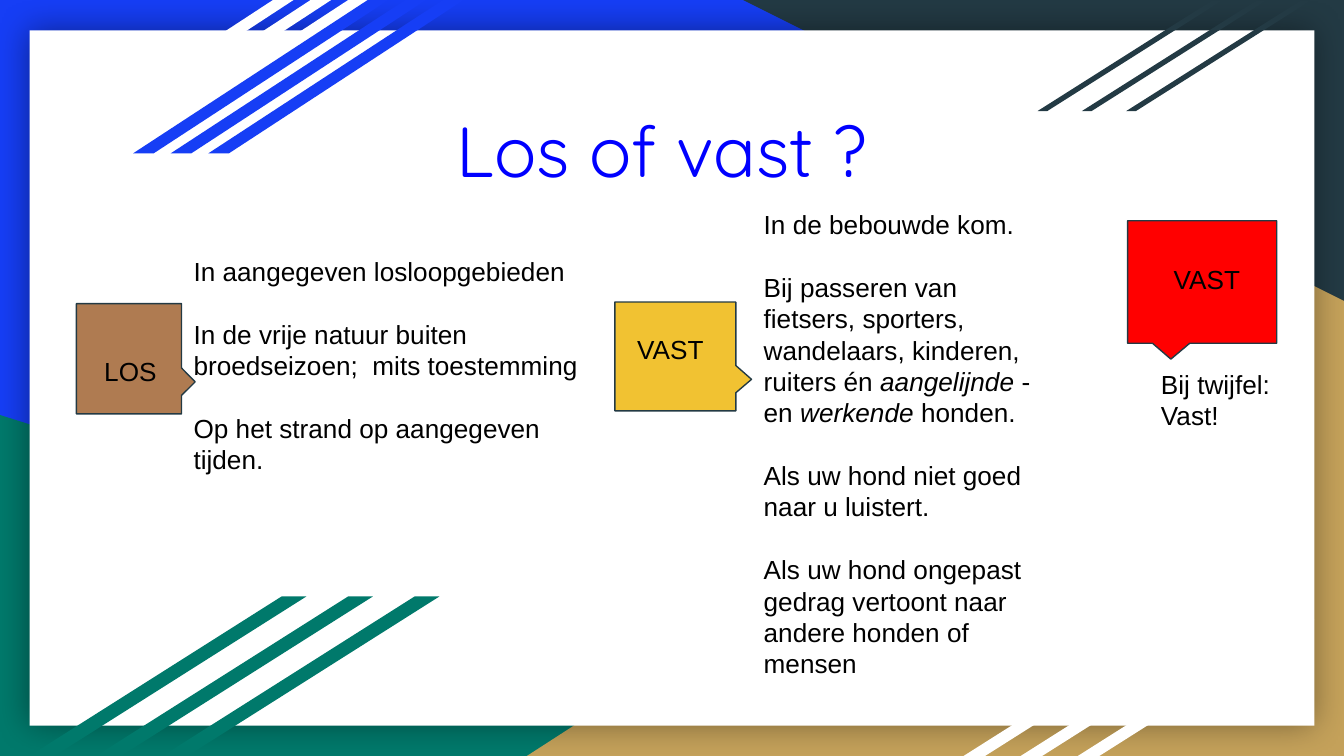
"""Build the slide on when dogs may run loose and when they stay leashed."""
from lxml import etree
from pptx import Presentation
from pptx import util as u
from pptx.dml.color import RGBColor
from pptx.enum import shapes, text
from pptx.oxml.ns import qn

WIDTH = 10
HEIGHT = WIDTH * 9 / 16
BLUE, GREEN, SAND, SLATE, WHITE = "163EF5", "00796B", "C4A15A", "233A44", "FFFFFF"

CORNERS = [
    ((0, 54.9, 80.6, 45.1), GREEN, 0, False),
    ((39.2, 30.2, 60.8, 69.8), SAND, 0, True),
    ((55.3, 0, 44.7, 39.8), SLATE, 180, False),
]
PANEL = (2.2, 4, 95.6, 92)
STRIPES = [
    ((2.85, 0, 19, 20.3), 2.8, 1.53, WHITE),
    ((9.9, 0, 19, 20.3), 2.8, 1.53, BLUE),
    ((77.2, 0.1, 13.7, 14.6), 3.3, 1.58, SLATE),
    ((71.7, 82, 17.6, 18), 4.25, 1.58, WHITE),
    ((2.2, 78.9, 20.6, 21.1), 4.95, 1.58, GREEN),
]
TITLE = ("Los of vast ? ", (20.7, 13.6, 58.6, 12.3))
RULES = [
    ((13.42, 32, 32.4, 46.9), [
        "In aangegeven losloopgebieden",
        "In de vrije natuur buiten broedseizoen;  mits toestemming",
        "Op het strand op aangegeven tijden.",
    ]),
    ((55.84, 25.8, 22.9, 64.5), [
        "In de bebouwde kom.",
        "Bij passeren van fietsers, sporters, wandelaars, kinderen, "
        "ruiters én *aangelijnde* - en *werkende* honden.",
        "Als uw hond niet goed naar u luistert.",
        "Als uw hond ongepast gedrag vertoont naar andere honden of mensen",
    ]),
    ((85.4, 46.9, 12, 19.9), ["Bij twijfel: Vast!"]),
]
CALLOUTS = [
    ("LOS", (5.5, 40.5, 8.2, 13.9), 270, "AF7B51", (6.77, 45.3, 6.5, 7.1), "LEFT"),
    ("VAST", (46.2, 39.15, 8.1, 16), 270, "F1C232", (46.43, 42.3, 7.6, 10.1), "LEFT"),
    ("VAST", (83.9, 29.2, 11.1, 16.2), 0, "FF0000", (85.3, 33, 9, 8.2), "CENTER"),
]


def color(value):
    """Turn a hex string into a colour."""
    return RGBColor.from_string(value)


def place(box):
    """Turn percentages of the slide into lengths."""
    return [u.Inches(share * side / 100)
            for share, side in zip(box, (WIDTH, HEIGHT) * 2)]


def add_shape(slide, kind, box, fill, rotation=0, adjust=(), line=None):
    """Add a filled preset shape without the theme's shadow."""
    shape = slide.shapes.add_shape(kind, *place(box))
    shape.shadow.inherit = False
    shape.rotation = rotation
    shape.fill.solid()
    shape.fill.fore_color.rgb = color(fill)
    for index, value in enumerate(adjust):
        shape.adjustments[index] = value
    if line:
        shape.line.color.rgb = color(line)
        shape.line.width = u.Pt(0.75)
    else:
        shape.line.fill.background()
    return shape


def add_glow_shadow(shape):
    """Give a shape a soft shadow on all sides."""
    effects = shape.element.spPr.find(qn("a:effectLst"))
    shadow = etree.SubElement(effects, qn("a:outerShdw"),
                              blurRad=str(u.Pt(18)), dist="0", dir="0",
                              algn="ctr", rotWithShape="0")
    black = etree.SubElement(shadow, qn("a:srgbClr"), val="000000")
    etree.SubElement(black, qn("a:alpha"), val="40000")


def add_text(slide, paragraphs, box, size=14, font="Arial", ink="000000",
             align="LEFT", anchor="TOP", gap=16.8):
    """Add paragraphs in which *asterisks* mark italics."""
    frame = slide.shapes.add_textbox(*place(box)).text_frame
    frame.word_wrap = True
    frame.vertical_anchor = text.MSO_ANCHOR[anchor]
    frame.margin_left = frame.margin_right = u.Inches(0.1)
    frame.margin_top = frame.margin_bottom = u.Inches(0.1)
    for number, words in enumerate(paragraphs):
        paragraph = frame.add_paragraph() if number else frame.paragraphs[0]
        paragraph.alignment = text.PP_ALIGN[align]
        paragraph.space_before = u.Pt(gap if number else 0)
        for part, piece in enumerate(words.split("*")):
            run = paragraph.add_run()
            run.text = piece
            run.font.name, run.font.size = font, u.Pt(size)
            run.font.italic = part % 2 == 1
            run.font.color.rgb = color(ink)


def build():
    """Build and save the slide."""
    deck = Presentation()
    deck.slide_width, deck.slide_height = u.Inches(WIDTH), u.Inches(HEIGHT)
    slide = deck.slides.add_slide(deck.slide_layouts[6])
    slide.background.fill.solid()
    slide.background.fill.fore_color.rgb = color(BLUE)
    preset = shapes.MSO_SHAPE

    for box, fill, rotation, mirrored in CORNERS:
        corner = add_shape(slide, preset.RIGHT_TRIANGLE, box, fill, rotation)
        if mirrored:
            corner.element.spPr.xfrm.set("flipH", "1")
    add_glow_shadow(add_shape(slide, preset.RECTANGLE, PANEL, WHITE))
    for (left, *rest), step, slant, fill in STRIPES:
        for position in (2, 1, 0):
            add_shape(slide, preset.PARALLELOGRAM,
                      (left + position * step, *rest), fill, adjust=[slant])

    heading, heading_box = TITLE
    add_text(slide, [heading], heading_box, size=38, font="Quicksand",
             ink="0000FF", align="CENTER", anchor="MIDDLE")
    for box, paragraphs in RULES:
        add_text(slide, paragraphs, box)
    for label, box, rotation, fill, label_box, align in CALLOUTS:
        add_shape(slide, preset.ROUNDED_RECTANGULAR_CALLOUT, box, fill, rotation,
                  adjust=(-0.21, 0.63, 0), line=SLATE)
        add_text(slide, [label], label_box, align=align)
    deck.save("out.pptx")


if __name__ == "__main__":
    build()
